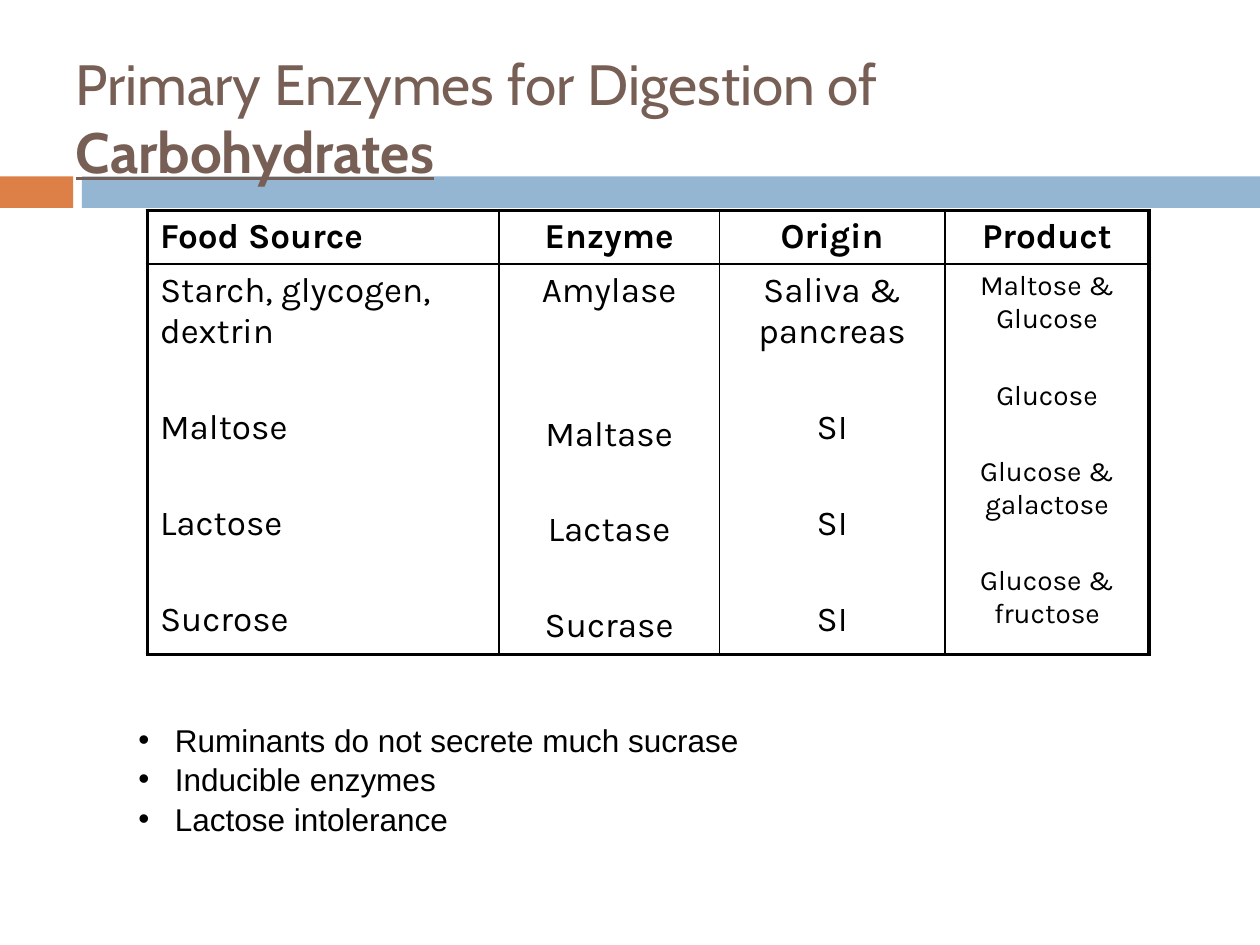
"""Build a slide on the primary enzymes for digestion of carbohydrates."""
from lxml.etree import SubElement as Sub
from pptx import Presentation
from pptx.dml.color import RGBColor
from pptx.enum.shapes import MSO_SHAPE as Shape
from pptx.enum.text import MSO_ANCHOR as Anchor, MSO_AUTO_SIZE as Auto, PP_ALIGN as Align
from pptx.oxml.ns import qn
from pptx.util import Inches, Pt

BLACK = RGBColor(0x00, 0x00, 0x00)
BROWN = RGBColor(0x77, 0x5F, 0x55)
ORANGE = RGBColor(0xDD, 0x80, 0x47)
BLUE = RGBColor(0x94, 0xB6, 0xD2)

HEADS = ["Food Source", "Enzyme", "Origin", "Product"]
LISTS = [
    ["Starch, glycogen, dextrin", "Maltose", "Lactose", "Sucrose"],
    ["Amylase", "Maltase", "Lactase", "Sucrase"],
    ["Saliva & pancreas", "SI", "SI", "SI"],
    ["Maltose & Glucose", "Glucose", "Glucose & galactose", "Glucose & fructose"],
]
SIZES = [20, 20, 20, 16]
GAPS = [31.4, 31.4, 31.4, 25]
FIRST = [31.4, 58.6, 31.4, 25]
WIDTHS = [2.79, 1.75, 1.79, 1.62]
HEIGHTS = [0.42, 3.1]
NOTES = ["Ruminants do not secrete much sucrase", "Inducible enzymes", "Lactose intolerance"]


class Page:
    head, body, note = "Cabin", "Karla", "Arial"
    thin, thick = 1, 2.25

    def __init__(self, deck):
        self.slide = deck.slides.add_slide(deck.slide_layouts[5])
        self.shapes = self.slide.shapes

    def style(self, run, font, size, color, bold=False):
        run.font.name, run.font.size, run.font.bold = font, Pt(size), bold
        run.font.color.rgb = color

    def title(self, box, plain, strong):
        shape = self.shapes.title
        shape.left, shape.top, shape.width, shape.height = map(Inches, box)
        frame = shape.text_frame
        frame.auto_size, frame.vertical_anchor = Auto.NONE, Anchor.MIDDLE
        para = frame.paragraphs[0]
        para.alignment = Align.LEFT
        for text, bold in ((plain, False), (strong, True)):
            run = para.add_run()
            run.text = text
            self.style(run, self.head, 32.4, BROWN, bold)
            run.font.underline = bold

    def bar(self, box, color):
        shape = self.shapes.add_shape(Shape.RECTANGLE, *map(Inches, box))
        shape.shadow.inherit = False
        shape.fill.solid()
        shape.fill.fore_color.rgb = color
        shape.line.fill.background()
        self.shapes.title.element.addprevious(shape.element)

    def border(self, cell, widths):
        props = cell._tc.get_or_add_tcPr()
        for spot, (side, width) in enumerate(zip("LRTB", widths)):
            line = props.makeelement(qn(f"a:ln{side}"), {"w": str(Pt(width))})
            fill = Sub(line, qn("a:solidFill"))
            Sub(fill, qn("a:srgbClr"), val=str(BLACK))
            props.insert(spot, line)

    def cell(self, cell, lines, size, align, gaps, bold):
        cell.fill.background()
        cell.text_frame.text = "\n".join(lines)
        for para, gap in zip(cell.text_frame.paragraphs, gaps):
            para.alignment, para.space_before = align, Pt(gap)
            self.style(para.runs[0], self.body, size, BLACK, bold)

    def table(self, left, top):
        rows, cols = len(HEIGHTS), len(WIDTHS)
        size = map(Inches, (left, top, sum(WIDTHS), sum(HEIGHTS)))
        grid = self.shapes.add_table(rows, cols, *size).table
        grid.first_row = grid.horz_banding = False
        for row, high in zip(grid.rows, HEIGHTS):
            row.height = Inches(high)
        for col, wide in enumerate(WIDTHS):
            grid.columns[col].width = Inches(wide)
            align = Align.CENTER if col else Align.LEFT
            gaps = [0, FIRST[col], GAPS[col], GAPS[col]]
            self.cell(grid.cell(0, col), [HEADS[col]], 20, align, [0], True)
            self.cell(grid.cell(1, col), LISTS[col], SIZES[col], align, gaps, False)
            for row in range(rows):
                outer = (col == 0, col == cols - 1, row == 0, row == rows - 1)
                self.border(grid.cell(row, col), [self.thick if edge else self.thin for edge in outer])

    def bullets(self, box, lines):
        frame = self.shapes.add_textbox(*map(Inches, box)).text_frame
        frame.word_wrap = True
        frame.text = "\n".join(lines)
        for para in frame.paragraphs:
            para.space_before = Pt(1)
            self.style(para.runs[0], self.note, 18, BLACK)
            props = para._p.get_or_add_pPr()
            props.set("marL", str(Inches(0.29)))
            props.set("indent", str(-Inches(0.29)))
            Sub(props, qn("a:buFont"), typeface=self.note)
            Sub(props, qn("a:buChar"), char="•")


def main():
    deck = Presentation()
    deck.slide_width, deck.slide_height = Inches(10), Inches(7.5)
    page = Page(deck)
    page.bar((0, 1.4, 0.58, 0.25), ORANGE)
    page.bar((0.65, 1.4, 9.35, 0.25), BLUE)
    page.title((0.5, 0.3, 9, 1.25), "Primary Enzymes for Digestion of ", "Carbohydrates")
    page.table(1.17, 1.67)
    page.bullets((1, 5.67, 7.75, 1.31), NOTES)
    deck.save("out.pptx")


if __name__ == "__main__":
    main()
